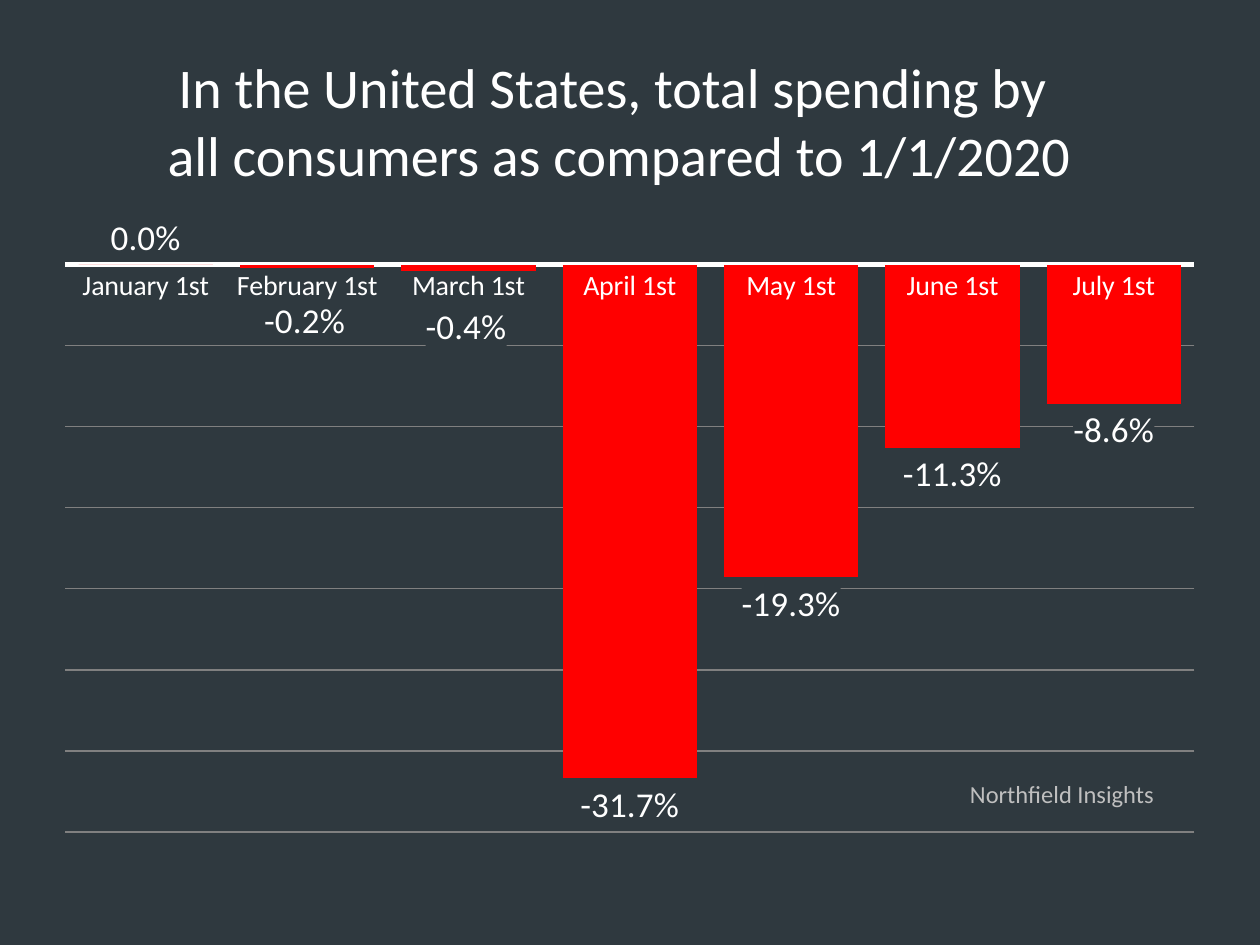
from copy import deepcopy
from typing import NamedTuple

from lxml import etree
from pptx import Presentation
from pptx.chart.data import CategoryChartData
from pptx.dml.color import RGBColor
from pptx.enum.chart import XL_CHART_TYPE, XL_LABEL_POSITION, XL_TICK_MARK
from pptx.enum.shapes import MSO_SHAPE
from pptx.enum.text import MSO_AUTO_SIZE, PP_ALIGN
from pptx.oxml import parse_xml
from pptx.oxml.ns import nsdecls, qn
from pptx.util import Inches, Pt

COLUMN = XL_CHART_TYPE.COLUMN_CLUSTERED
OUTSIDE_END = XL_LABEL_POSITION.OUTSIDE_END
NO_TICK = XL_TICK_MARK.NONE
LEFT, CENTER = PP_ALIGN.LEFT, PP_ALIGN.CENTER

FONT = "Calibri"
SLATE, WHITE, RED = "2F393F", "FFFFFF", "FF0000"
GRID_GRAY, SOURCE_GRAY = "808080", "BFBFBF"


class Month(NamedTuple):
    name: str
    change: float
    label_drop: float = 0  # share of the chart height


MONTHS = [
    Month("January 1st", 0),
    Month("February 1st", -0.002, 0.042),
    Month("March 1st", -0.004, 0.047),
    Month("April 1st", -0.317),
    Month("May 1st", -0.193),
    Month("June 1st", -0.113),
    Month("July 1st", -0.086),
]


def rgb(value: str) -> RGBColor:
    return RGBColor.from_string(value)


def set_font(font, size: float, color: str) -> None:
    font.name = FONT
    font.size = Pt(size)
    font.color.rgb = rgb(color)


def set_line(line, width: float, color: str) -> None:
    line.width = Pt(width)
    line.color.rgb = rgb(color)


def add_text(slide, lines: list[str], left: float, top: float, width: float,
             height: float, *, size: float, color: str, align=LEFT,
             wrap: bool = True) -> None:
    sp = slide.shapes.add_textbox(Inches(left), Inches(top),
                                  Inches(width), Inches(height))
    tf = sp.text_frame
    tf.word_wrap = wrap
    tf.auto_size = MSO_AUTO_SIZE.SHAPE_TO_FIT_TEXT
    for i, line in enumerate(lines):
        p = tf.paragraphs[0] if i == 0 else tf.add_paragraph()
        p.alignment = align
        r = p.add_run()
        r.text = line
        set_font(r.font, size, color)


def manual_layout(**values) -> etree._Element:
    items = "".join(f'<c:{tag} val="{val}"/>' for tag, val in values.items())
    return parse_xml(f'<c:layout {nsdecls("c")}><c:manualLayout>{items}'
                     '</c:manualLayout></c:layout>')


def hide_leader_lines(d_lbls: etree._Element) -> None:
    for old in d_lbls.findall(qn("c:showLeaderLines")):
        d_lbls.remove(old)
    d_lbls.append(parse_xml(f'<c:showLeaderLines {nsdecls("c")} val="0"/>'))
    c15 = "http://schemas.microsoft.com/office/drawing/2012/chart"
    d_lbls.append(parse_xml(
        f'<c:extLst {nsdecls("c")}>'
        f'<c:ext uri="{{CE6537A1-D6FC-4f65-9D91-7224C49458BB}}" xmlns:c15="{c15}">'
        '<c15:showLeaderLines val="0"/></c:ext></c:extLst>'))


def format_labels(series) -> None:
    """Label each column on a slate ground and lower the labels that need it."""
    labels = series.data_labels
    labels.show_value = True
    labels.number_format = "0.0%"
    labels.number_format_is_linked = False
    labels.position = OUTSIDE_END
    set_font(labels.font, 20, WHITE)
    d_lbls = labels._element
    d_lbls.find(qn("c:numFmt")).addnext(parse_xml(
        f'<c:spPr {nsdecls("c", "a")}><a:solidFill><a:srgbClr val="{SLATE}"/>'
        '</a:solidFill></c:spPr>'))

    shared = [el for el in d_lbls if el.tag != qn("c:showLeaderLines")]
    lowered = [(i, m) for i, m in enumerate(MONTHS) if m.label_drop]
    for position, (i, month) in enumerate(lowered):
        d_lbl = parse_xml(f'<c:dLbl {nsdecls("c")}><c:idx val="{i}"/></c:dLbl>')
        d_lbl.append(manual_layout(x=-0.002, y=month.label_drop))
        d_lbl.extend(deepcopy(el) for el in shared)
        d_lbls.insert(position, d_lbl)
    hide_leader_lines(d_lbls)


def add_spending_chart(slide) -> None:
    data = CategoryChartData(number_format="0.0%")
    data.categories = [m.name for m in MONTHS]
    data.add_series("Series 1", [m.change for m in MONTHS])
    chart = slide.shapes.add_chart(COLUMN, Inches(0.35), Inches(1.72),
                                   Inches(9.27), Inches(5.06), data).chart
    chart.has_title = False
    chart.has_legend = False
    set_font(chart.font, 10, "000000")

    plot_area = chart._chartSpace.chart.plotArea
    for old in plot_area.findall(qn("c:layout")):
        plot_area.remove(old)
    plot_area.insert(0, manual_layout(
        layoutTarget="inner", xMode="edge", yMode="edge",
        x=0.018, y=0.034, w=0.967, h=0.931))

    plot = chart.plots[0]
    plot.vary_by_categories = False
    plot.gap_width = 20
    plot.overlap = -27
    series = plot.series[0]
    series.invert_if_negative = False
    series.format.fill.solid()
    series.format.fill.fore_color.rgb = rgb(RED)
    format_labels(series)

    months = chart.category_axis
    months.major_tick_mark = months.minor_tick_mark = NO_TICK
    set_font(months.tick_labels.font, 16, WHITE)
    set_line(months.format.line, 3, WHITE)

    change = chart.value_axis
    change.minimum_scale, change.maximum_scale = -0.35, 0.014
    change.major_unit = 0.05
    change.has_major_gridlines = True
    set_line(change.major_gridlines.format.line, 0.75, GRID_GRAY)
    change.visible = False


def main() -> None:
    prs = Presentation()
    prs.slide_width, prs.slide_height = Inches(10), Inches(7.5)
    slide = prs.slides.add_slide(prs.slide_layouts[6])

    ground = slide.shapes.add_shape(MSO_SHAPE.RECTANGLE, 0, 0,
                                    prs.slide_width, prs.slide_height)
    ground.shadow.inherit = False
    ground.fill.solid()
    ground.fill.fore_color.rgb = rgb(SLATE)
    ground.line.fill.background()

    add_spending_chart(slide)
    add_text(slide, ["In the United States, total spending by ",
                     "all consumers as compared to 1/1/2020"],
             -0.17, 0.37, 10.17, 1.18, size=32, color=WHITE, align=CENTER)
    add_text(slide, ["Northfield Insights"], 7.6, 6.13, 1.84, 0.34,
             size=14, color=SOURCE_GRAY, wrap=False)
    prs.save("out.pptx")


if __name__ == "__main__":
    main()
